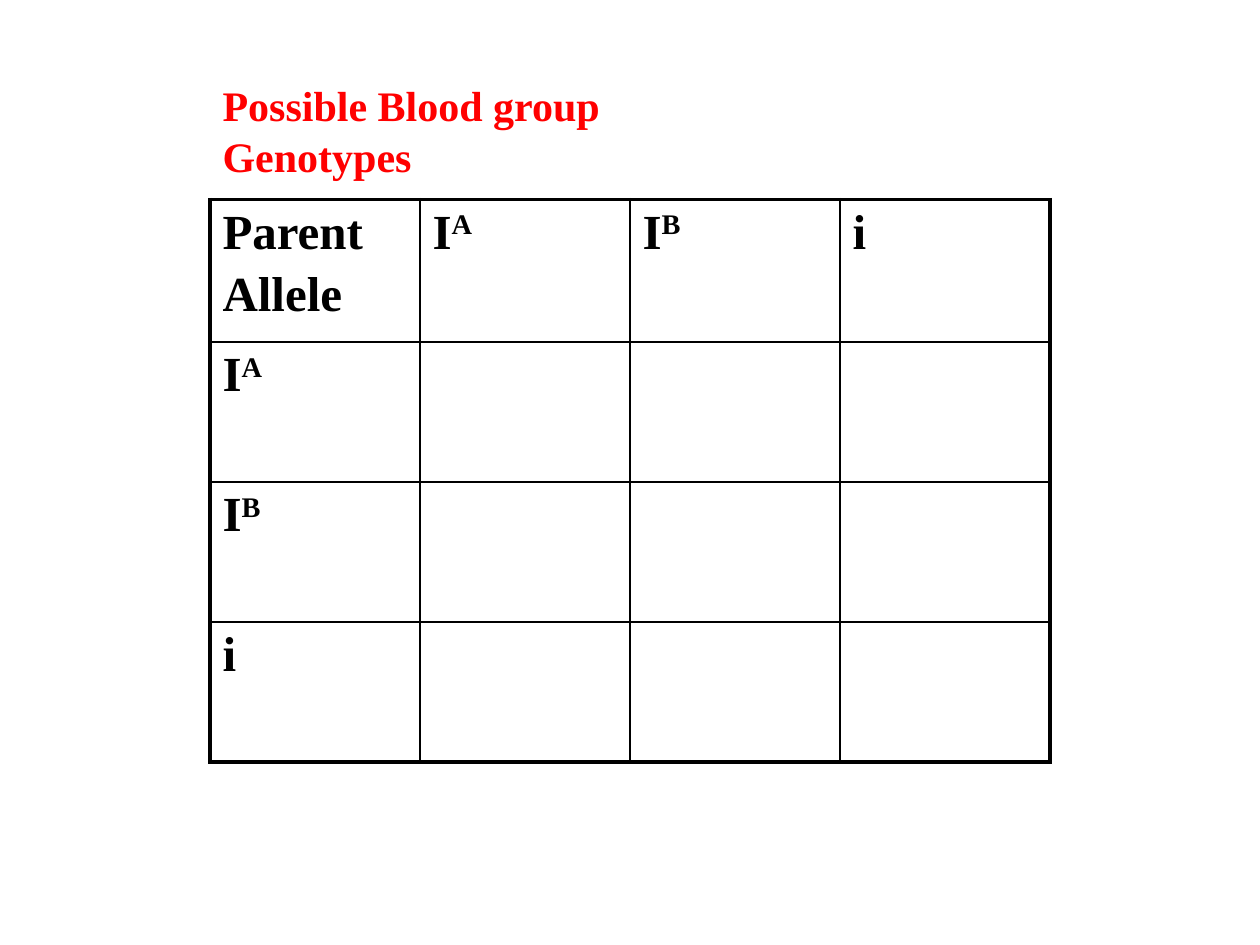
from pptx import Presentation
from pptx.dml.color import RGBColor
from pptx.enum import text
from pptx.oxml import parse_xml
from pptx.oxml.ns import nsdecls
from pptx.util import Pt

TITLE = "Possible Blood group Genotypes"
# Each allele is a base letter and its superscript.
ALLELES = [("I", "A"), ("I", "B"), ("i", "")]
CORNER = ["Parent", "Allele"]

COLORS = {"title": "FF0000", "ink": "000000"}
FONT = "Times New Roman"
LEFT, TOP, COL = 120, 114, 120
ROWS = [81.4, 80, 80, 80]
THICK, THIN = 2.25, 1


def add_run(para, words, size, color, raised=False):
    run = para.add_run()
    run.text = words
    font = run.font
    font.name, font.size, font.bold = FONT, Pt(size), True
    font.color.rgb = RGBColor.from_string(COLORS[color])
    if raised:
        run._r.get_or_add_rPr().set("baseline", "30000")


def add_allele(cell, allele):
    para = cell.text_frame.paragraphs[0]
    base, sup = allele
    add_run(para, base, 28, "ink")
    if sup:
        add_run(para, sup, 28, "ink", raised=True)


def set_edges(cell, row, col, last):
    """Draw the cell's borders, thick where they meet the table's outside."""
    outer = {"L": col == 0, "R": col == last, "T": row == 0, "B": row == last}
    props = cell._tc.get_or_add_tcPr()
    for spot, (side, edge) in enumerate(outer.items()):
        width = Pt(THICK if edge else THIN)
        line = parse_xml(
            f'<a:ln{side} {nsdecls("a")} w="{width}"><a:solidFill>'
            f'<a:srgbClr val="{COLORS["ink"]}"/></a:solidFill></a:ln{side}>')
        props.insert(spot, line)


def add_title(slide):
    title = slide.shapes.title
    title.left, title.top = Pt(LEFT), Pt(42)
    title.width, title.height = Pt(344), Pt(36)
    frame = title.text_frame
    frame.word_wrap = False
    frame.auto_size = text.MSO_AUTO_SIZE.NONE
    frame.vertical_anchor = text.MSO_ANCHOR.TOP
    para = frame.paragraphs[0]
    para.alignment = text.PP_ALIGN.LEFT
    add_run(para, TITLE, 24, "title")


def add_grid(slide):
    count = len(ROWS)
    table = slide.shapes.add_table(count, count, Pt(LEFT), Pt(TOP),
                                   Pt(COL * count), Pt(sum(ROWS))).table
    table.first_row = table.horz_banding = False
    for col in table.columns:
        col.width = Pt(COL)
    for row, height in zip(table.rows, ROWS):
        row.height = Pt(height)
    for r in range(count):
        for c in range(count):
            cell = table.cell(r, c)
            cell.fill.background()
            set_edges(cell, r, c, count - 1)

    frame = table.cell(0, 0).text_frame
    add_run(frame.paragraphs[0], CORNER[0], 28, "ink")
    para = frame.add_paragraph()
    para.space_before = Pt(4.5)
    add_run(para, CORNER[1], 28, "ink")
    for i, allele in enumerate(ALLELES, 1):
        add_allele(table.cell(0, i), allele)
        add_allele(table.cell(i, 0), allele)


def main():
    deck = Presentation()
    deck.slide_width, deck.slide_height = Pt(720), Pt(540)
    slide = deck.slides.add_slide(deck.slide_layouts[5])
    add_grid(slide)
    add_title(slide)
    deck.save("out.pptx")


if __name__ == "__main__":
    main()
